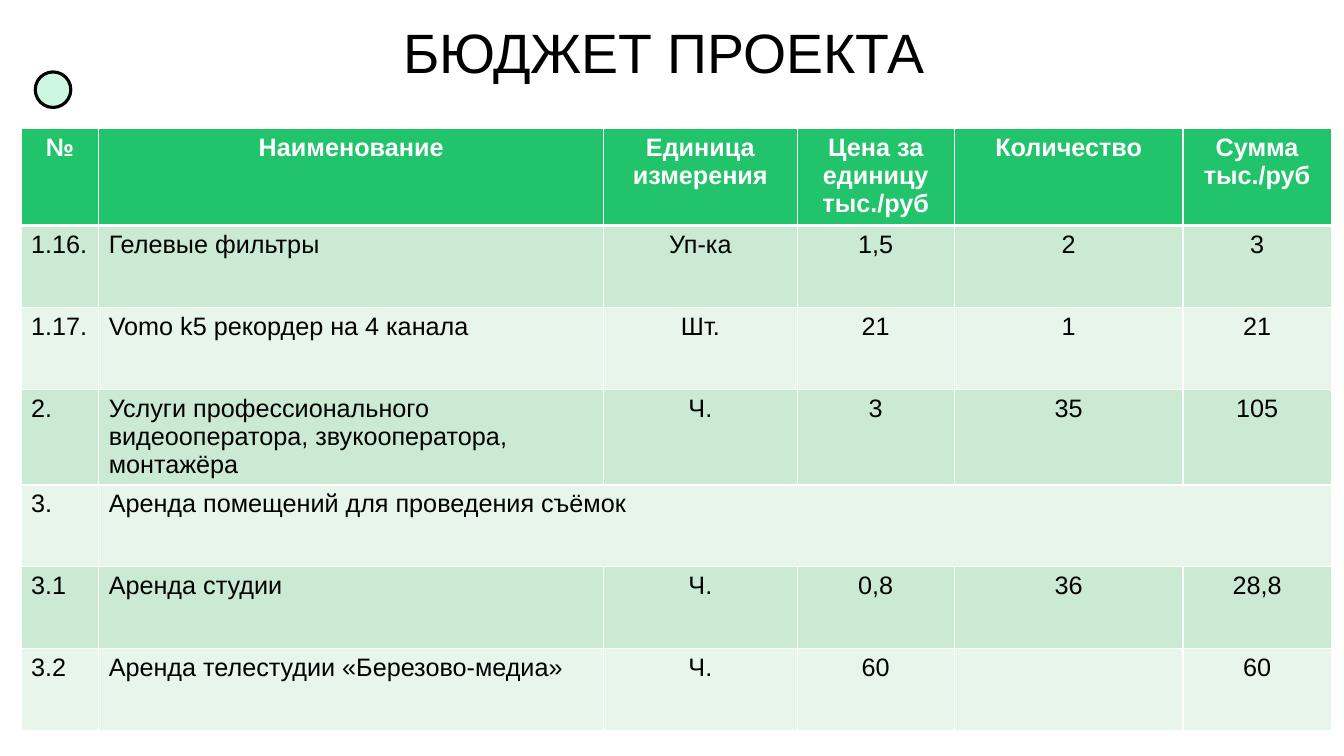
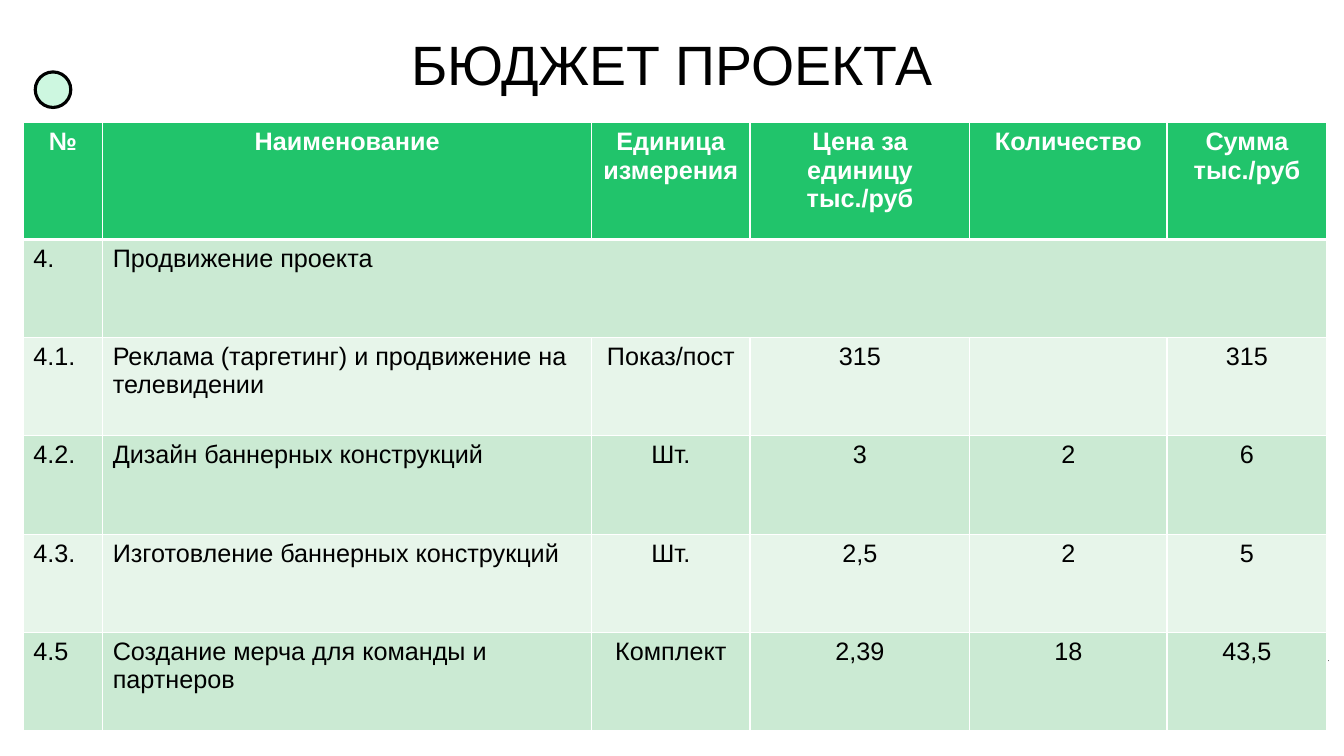
from dataclasses import dataclass

from lxml import etree
from pptx import Presentation
from pptx.dml.color import RGBColor
from pptx.enum.shapes import MSO_SHAPE
from pptx.enum.text import MSO_ANCHOR, PP_ALIGN
from pptx.oxml.ns import qn
from pptx.util import Pt

OVAL = MSO_SHAPE.OVAL
MIDDLE = MSO_ANCHOR.MIDDLE
LEFT, CENTER = PP_ALIGN.LEFT, PP_ALIGN.CENTER


@dataclass(frozen=True)
class Theme:
    font: str = "Arial"
    title: float = 39.6
    body: float = 18
    ink: str = "000000"
    white: str = "FFFFFF"
    head: str = "21C46B"
    bands: tuple[str, str] = ("CBEAD3", "E7F5EA")
    dot: str = "CDF7E0"
    thin: float = 1
    thick: float = 3
    ring: float = 2.25


THEME = Theme()
TITLE = "БЮДЖЕТ ПРОЕКТА"
HEADS = ("№", "Наименование", "Единица измерения",
         "Цена за единицу тыс./руб", "Количество", "Сумма тыс./руб")


@dataclass(frozen=True)
class Budget:
    """One page of the budget; a row of two texts is a section heading."""
    title_at: tuple[float, float]
    left: float
    top: float
    widths: tuple[float, ...]
    heights: tuple[float, ...]
    rows: tuple[tuple[str, ...], ...]


PAGES = (
    Budget(
        (60.5, 14.5), 15.1, 91.8,
        (55.4, 360.7, 138.2, 112.3, 163.4, 105.8),
        (69.2, 58.5, 58.5, 68, 58.5, 58.5, 58.5),
        (
            ("1.16.", "Гелевые фильтры", "Уп-ка", "1,5", "2", "3"),
            ("1.17.", "Vomo k5 рекордер на 4 канала", "Шт.", "21", "1", "21"),
            ("2.", "Услуги профессионального видеооператора, звукооператора, монтажёра",
             "Ч.", "3", "35", "105"),
            ("3.", "Аренда помещений для проведения съёмок"),
            ("3.1", "Аренда студии", "Ч.", "0,8", "36", "28,8"),
            ("3.2", "Аренда телестудии «Березово-медиа»", "Ч.", "60", "", "60"),
        ),
    ),
    Budget(
        (66.2, 23.1), 16.6, 87.8,
        (56.8, 349.2, 113.2, 157, 140.8, 114.3),
        (83.2,) + (70.2,) * 5,
        (
            ("4.", "Продвижение проекта"),
            ("4.1.", "Реклама (таргетинг) и продвижение на телевидении",
             "Показ/пост", "315", "", "315"),
            ("4.2.", "Дизайн баннерных конструкций", "Шт.", "3", "2", "6"),
            ("4.3.", "Изготовление баннерных конструкций", "Шт.", "2,5", "2", "5"),
            ("4.5", "Создание мерча для команды и партнеров",
             "Комплект", "2,39", "18", "43,5"),
        ),
    ),
)


def rgb(code: str) -> RGBColor:
    return RGBColor.from_string(code)


def style(para, size: float, color: str, align, bold: bool = False) -> None:
    para.alignment = align
    font = para.font
    font.name, font.size, font.bold = THEME.font, Pt(size), bold
    font.color.rgb = rgb(color)


def edge(cell, side: str, width: float) -> None:
    """Draw one border; all borders must come before the cell's fill."""
    line = etree.SubElement(cell._tc.get_or_add_tcPr(), qn(f"a:ln{side}"),
                            w=str(Pt(width)))
    fill = etree.SubElement(line, qn("a:solidFill"))
    etree.SubElement(fill, qn("a:srgbClr"), val=THEME.white)


def paint(cell, row: int, col: int, text: str) -> None:
    head = row == 0
    for side in "LRTB":
        rule = (side, row) in (("B", 0), ("T", 1))
        edge(cell, side, THEME.thick if rule else THEME.thin)
    cell.fill.solid()
    cell.fill.fore_color.rgb = rgb(THEME.head if head else THEME.bands[(row - 1) % 2])
    cell.margin_bottom = Pt(0)
    cell.text = text
    style(cell.text_frame.paragraphs[0], THEME.body,
          THEME.white if head else THEME.ink,
          CENTER if head or col > 1 else LEFT, head)


def add_bars(slide) -> None:
    """Draw the row of slanted bars in the lower right corner."""
    top, low, lean, thick = 471.6, 508.3, 25.2, 2.9
    for i in range(5):
        left = 866.2 + 13.7 * i
        pen = slide.shapes.build_freeform(Pt(left + thick), Pt(low), scale=1.0)
        pen.add_line_segments([
            (Pt(left), Pt(low)),
            (Pt(left + lean), Pt(top)),
            (Pt(left + lean + thick), Pt(top)),
        ], close=True)
        bar = pen.convert_to_shape()
        bar.shadow.inherit = False
        bar.fill.solid()
        bar.fill.fore_color.rgb = rgb(THEME.ink)
        bar.line.fill.background()


def add_dot(slide) -> None:
    dot = slide.shapes.add_shape(OVAL, Pt(25.2), Pt(51.4), Pt(25.4), Pt(25.4))
    dot.shadow.inherit = False
    dot.fill.solid()
    dot.fill.fore_color.rgb = rgb(THEME.dot)
    dot.line.color.rgb = rgb(THEME.ink)
    dot.line.width = Pt(THEME.ring)


def add_title(slide, left: float, top: float) -> None:
    frame = slide.shapes.add_textbox(Pt(left), Pt(top), Pt(828), Pt(50)).text_frame
    frame.word_wrap = True
    frame.vertical_anchor = MIDDLE
    para = frame.paragraphs[0]
    para.text = TITLE
    para.line_spacing = 0.9
    style(para, THEME.title, THEME.ink, CENTER)


def add_grid(slide, page: Budget) -> None:
    rows = (HEADS,) + page.rows
    table = slide.shapes.add_table(
        len(rows), len(HEADS), Pt(page.left), Pt(page.top),
        Pt(sum(page.widths)), Pt(sum(page.heights))).table
    table.horz_banding = False
    for col, width in zip(table.columns, page.widths):
        col.width = Pt(width)
    for row, height in zip(table.rows, page.heights):
        row.height = Pt(height)
    for i, texts in enumerate(rows):
        for j, text in enumerate(texts):
            paint(table.cell(i, j), i, j, text)
        if len(texts) < len(HEADS):
            table.cell(i, len(texts) - 1).merge(table.cell(i, len(HEADS) - 1))


def main() -> None:
    deck = Presentation()
    deck.slide_width, deck.slide_height = Pt(960), Pt(540)
    for page in PAGES:
        slide = deck.slides.add_slide(deck.slide_layouts[6])
        add_bars(slide)
        add_dot(slide)
        add_title(slide, *page.title_at)
        add_grid(slide, page)
    deck.save("out.pptx")


if __name__ == "__main__":
    main()
